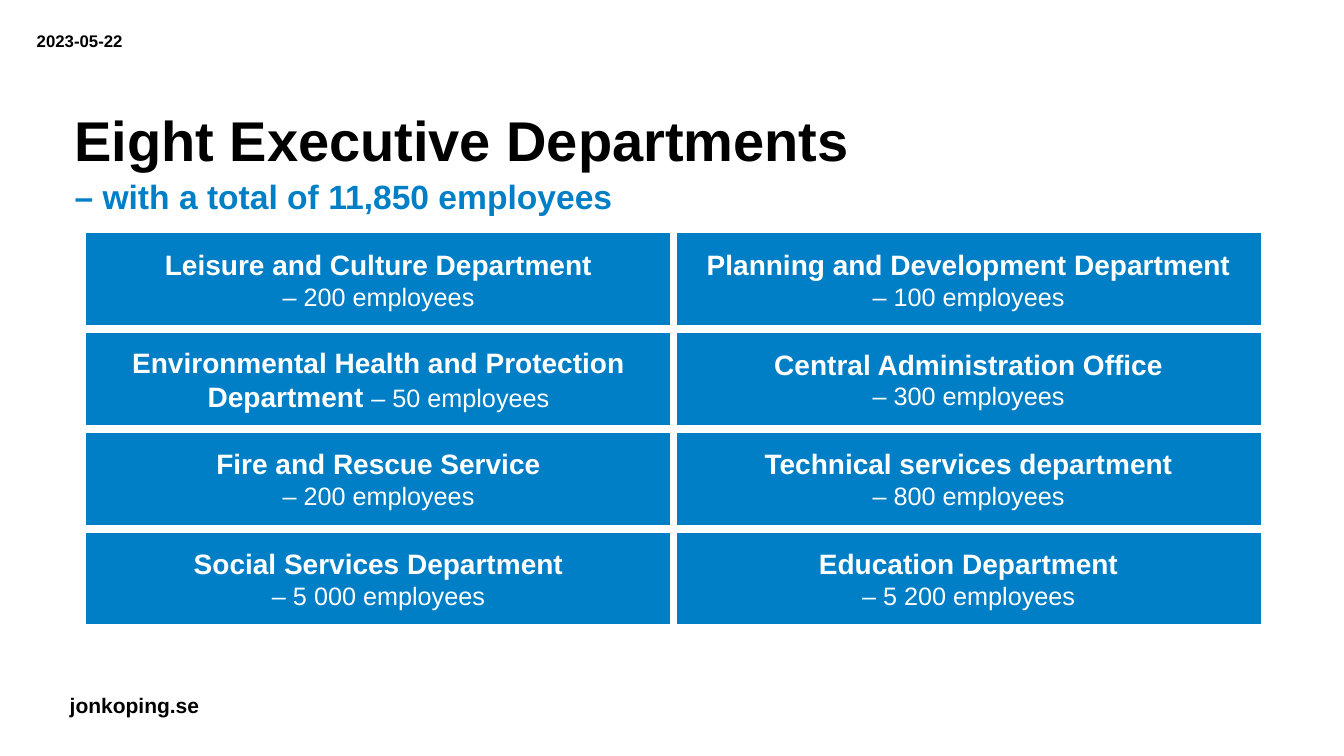
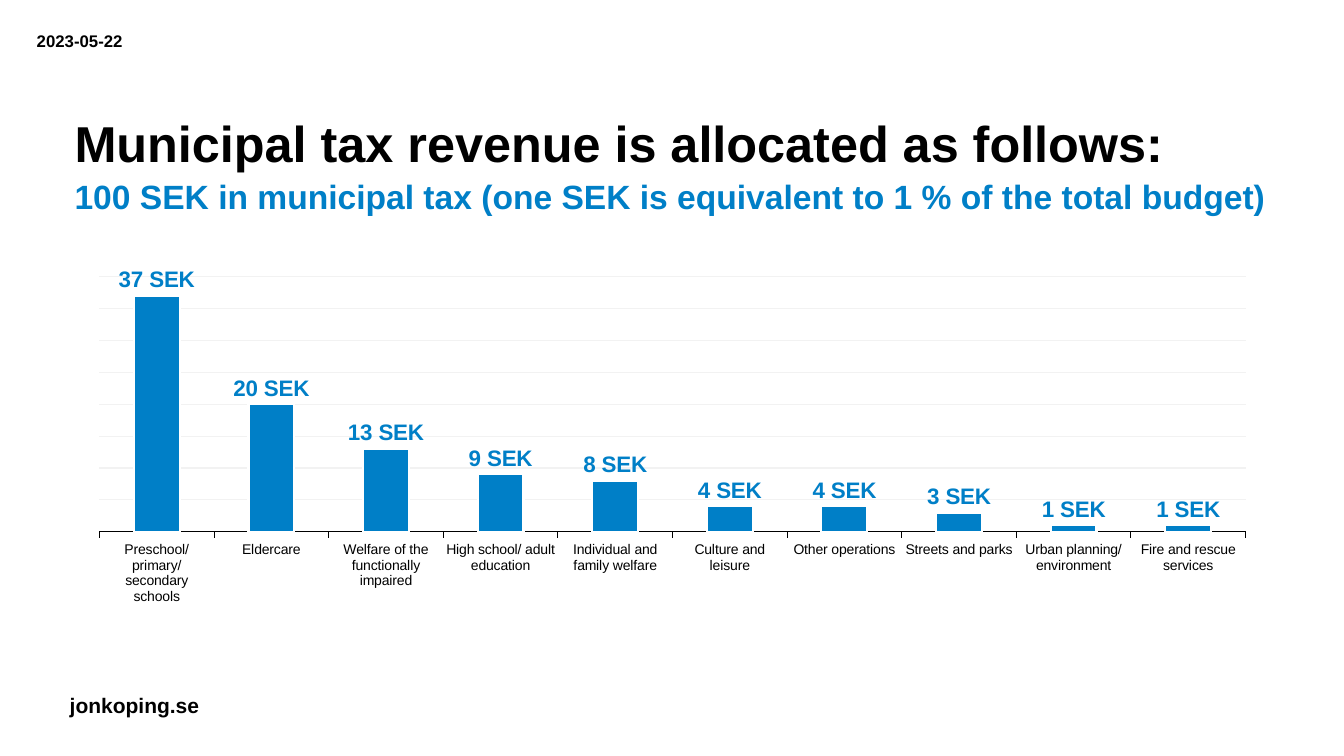
from lxml import etree
from pptx import Presentation
from pptx.chart.data import CategoryChartData
from pptx.dml.color import RGBColor
from pptx.enum.chart import XL_CHART_TYPE, XL_LABEL_POSITION, XL_TICK_MARK
from pptx.enum.shapes import MSO_SHAPE
from pptx.enum.text import MSO_ANCHOR, MSO_AUTO_SIZE, PP_ALIGN
from pptx.oxml import parse_xml
from pptx.oxml.ns import nsdecls, qn
from pptx.util import Emu, Pt

PX = 9525
FONT = "Arial"
BLUE, BLACK, WHITE, GRID = "007FC7", "000000", "FFFFFF", "F2F2F2"
LEFT, CENTER = PP_ALIGN.LEFT, PP_ALIGN.CENTER
TOP, MIDDLE, BOTTOM = MSO_ANCHOR.TOP, MSO_ANCHOR.MIDDLE, MSO_ANCHOR.BOTTOM
NO_FIT = MSO_AUTO_SIZE.NONE
RECT = MSO_SHAPE.RECTANGLE
COLUMNS = XL_CHART_TYPE.COLUMN_CLUSTERED
OUTSIDE_END = XL_LABEL_POSITION.OUTSIDE_END
TICK_OUT = XL_TICK_MARK.OUTSIDE

DEPARTMENTS = [
    [
        [("Leisure and Culture Department",), ("– 200 employees",)],
        [("Environmental Health and Protection Department ", "– 50 employees")],
        [("Fire and Rescue Service",), ("– 200 employees",)],
        [("Social Services Department",), ("– 5 000 employees",)],
    ],
    [
        [("Planning and Development Department",), ("– 100 employees",)],
        [("Central Administration Office",), ("– 300 employees",)],
        [("Technical services department",), ("– 800 employees",)],
        [("Education Department",), ("– 5 200 employees",)],
    ],
]

TAX_SHARES = {
    "Preschool/ primary/ secondary schools": 37,
    "Eldercare": 20,
    "Welfare of the functionally impaired": 13,
    "High school/ adult education": 9,
    "Individual and family welfare": 8,
    "Culture and leisure": 4,
    "Other operations": 4,
    "Streets and parks": 3,
    "Urban planning/ environment": 1,
    "Fire and rescue services": 1,
}


def rgb(value):
    return RGBColor.from_string(value)


def px(*lengths):
    return [Emu(n * PX) for n in lengths]


class Deck:
    def __init__(self):
        self.prs = Presentation()
        self.prs.slide_width, self.prs.slide_height = px(1280, 720)
        self.s = None

    def font(self, font, size, color, bold=False):
        font.name = FONT
        font.size = Pt(size)
        font.bold = bold
        font.color.rgb = rgb(color)

    def frame(self, sp, anchor, wrap=True, inset=0):
        tf = sp.text_frame
        tf.word_wrap = wrap
        tf.auto_size = NO_FIT
        tf.vertical_anchor = anchor
        tf.margin_left = tf.margin_right = Pt(inset)
        tf.margin_top = tf.margin_bottom = Pt(inset / 2)
        return tf

    def line(self, tf, text, size, color, align=LEFT):
        tf.text = text
        p = tf.paragraphs[0]
        p.alignment = align
        p.space_before = Pt(0)
        self.font(p.runs[0].font, size, color, True)
        return p

    def placeholder(self, sp, box, text, size, color):
        sp.left, sp.top, sp.width, sp.height = px(*box)
        return self.line(self.frame(sp, BOTTOM), text, size, color)

    def label(self, box, text, size, wrap=True, inset=0):
        sp = self.s.shapes.add_textbox(*px(*box))
        self.line(self.frame(sp, TOP, wrap, inset), text, size, BLACK)

    def slide(self, title, title_size, subtitle):
        self.s = self.prs.slides.add_slide(self.prs.slide_layouts[1])
        self.label((57, 655, 144, 34), "jonkoping.se", 15, False, 7.2)
        self.label((35, 29, 94, 19), "2023-05-22", 12)
        p = self.placeholder(self.s.shapes.title, (71, 48, 1137, 117),
                             title, title_size, BLACK)
        p.line_spacing = 0.9
        p = self.placeholder(self.s.placeholders[1], (71, 175, 1137, 31),
                             subtitle, 24, BLUE)
        pPr = p._p.get_or_add_pPr()
        pPr.set("marL", "0")
        pPr.set("indent", "0")
        etree.SubElement(pPr, qn("a:buNone"))

    def department(self, box, lines):
        sp = self.s.shapes.add_shape(RECT, *px(*box))
        sp.shadow.inherit = False
        sp.fill.solid()
        sp.fill.fore_color.rgb = rgb(BLUE)
        sp.line.color.rgb = rgb(WHITE)
        sp.line.width = Pt(5)
        tf = self.frame(sp, MIDDLE)
        for i, parts in enumerate(lines):
            p = tf.add_paragraph() if i else tf.paragraphs[0]
            p.alignment = CENTER
            for text in parts:
                r = p.add_run()
                r.text = text
                detail = text.startswith("–")
                self.font(r.font, 18 if detail else 20, WHITE, not detail)

    def column_chart(self, box, shares, number_format):
        data = CategoryChartData()
        data.categories = list(shares)
        data.add_series("Series 1", list(shares.values()))
        chart = self.s.shapes.add_chart(COLUMNS, *px(*box), data).chart
        chart.has_legend = chart.has_title = False
        self.font(chart.font, 10, BLACK)

        axis = chart.category_axis
        axis.major_tick_mark = TICK_OUT
        axis.format.line.color.rgb = rgb(BLACK)
        axis.format.line.width = Pt(0.75)
        self.font(axis.tick_labels.font, 10, BLACK)

        axis = chart.value_axis
        axis.visible = False
        axis.minimum_scale, axis.maximum_scale, axis.major_unit = 0, 40, 5
        axis.has_major_gridlines = True
        axis.major_gridlines.format.line.color.rgb = rgb(GRID)
        axis.major_gridlines.format.line.width = Pt(0.75)

        plot = chart.plots[0]
        plot.gap_width = 150
        plot.vary_by_categories = False
        series = plot.series[0]
        series.format.fill.solid()
        series.format.fill.fore_color.rgb = rgb(BLUE)
        series.format.line.color.rgb = rgb(WHITE)
        series.format.line.width = Pt(1.5)
        labels = series.data_labels
        labels.show_value = True
        labels.position = OUTSIDE_END
        labels.number_format = number_format
        labels.number_format_is_linked = False
        self.font(labels.font, 16, BLUE, True)
        self.plot_area(chart, x=0.02, y=0.03, w=0.96, h=0.74)

    def plot_area(self, chart, **sizes):
        area = chart._chartSpace.chart.plotArea
        for old in area.findall(qn("c:layout")):
            area.remove(old)
        parts = "".join(f'<c:{k} val="{v}"/>' for k, v in sizes.items())
        area.insert(0, parse_xml(
            f'<c:layout {nsdecls("c")}><c:manualLayout>'
            '<c:layoutTarget val="inner"/><c:xMode val="edge"/>'
            f'<c:yMode val="edge"/>{parts}</c:manualLayout></c:layout>'))


def main():
    deck = Deck()
    deck.slide("Eight Executive Departments", 40,
               "– with a total of 11,850 employees")
    for col, departments in enumerate(DEPARTMENTS):
        for row, lines in enumerate(departments):
            deck.department((79 + col * 562, 219 + row * 95, 563, 94), lines)

    deck.slide("Municipal tax revenue is allocated as follows:", 36,
               "100 SEK in municipal tax (one SEK is equivalent to 1 % of the total budget)")
    deck.column_chart((72, 254, 1137, 328), TAX_SHARES, '0" SEK"')
    deck.prs.save("out.pptx")


if __name__ == "__main__":
    main()
